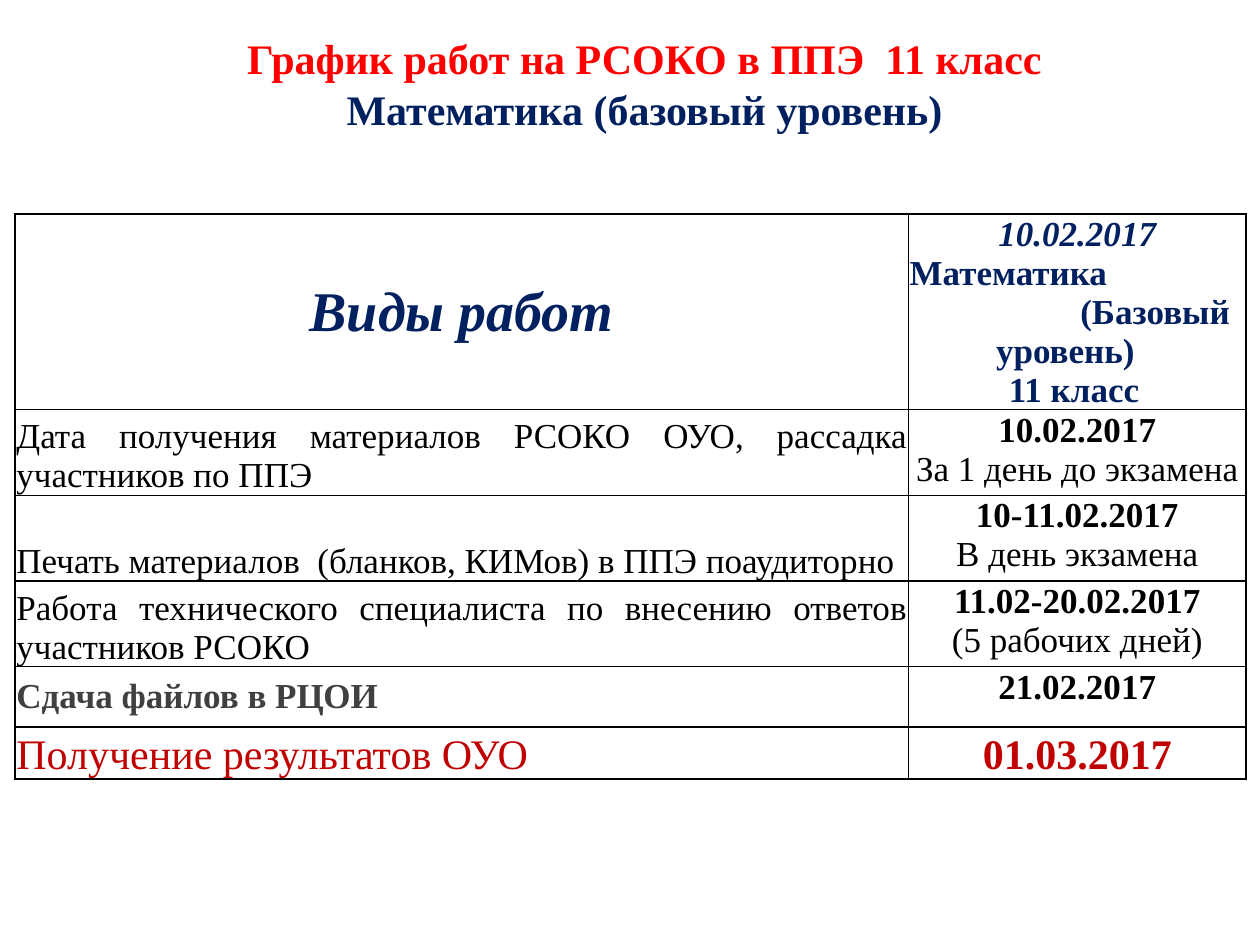
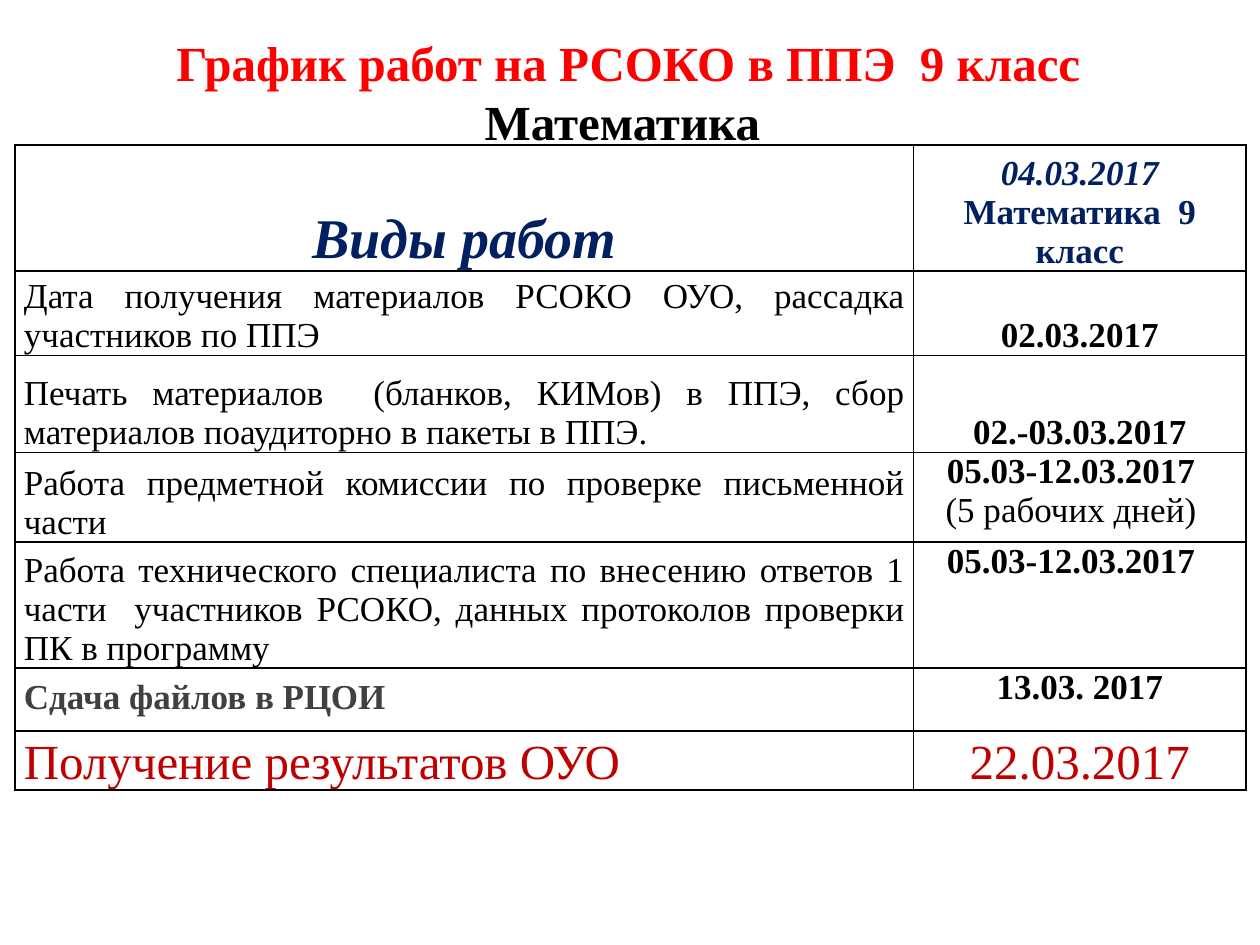
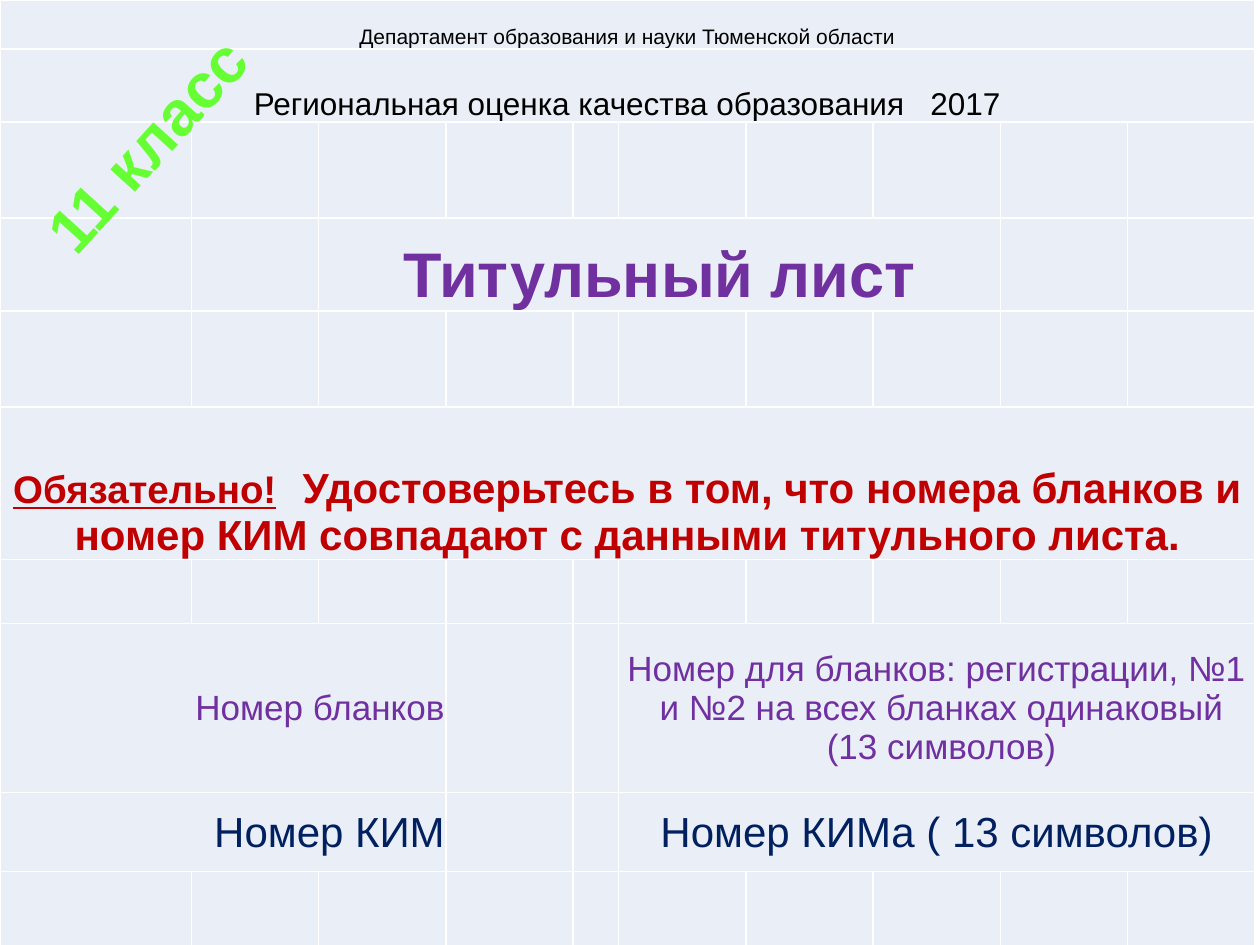
from lxml.etree import SubElement
from pptx import Presentation
from pptx.dml.color import RGBColor
from pptx.enum.text import MSO_ANCHOR, PP_ALIGN
from pptx.oxml.ns import qn
from pptx.util import Pt

PX = 9144  # EMU in one px, 100 px to the inch

BLACK = RGBColor(0x00, 0x00, 0x00)
WHITE = RGBColor(0xFF, 0xFF, 0xFF)
NAVY = RGBColor(0x00, 0x20, 0x60)
RED = RGBColor(0xFF, 0x00, 0x00)
DARK_RED = RGBColor(0xC0, 0x00, 0x00)
GRAY = RGBColor(0x40, 0x40, 0x40)
PURPLE = RGBColor(0x70, 0x30, 0xA0)
GREEN = RGBColor(0x66, 0xFF, 0x33)
PALE_BLUE = RGBColor(0xEA, 0xEF, 0xF7)

SERIF = "Times New Roman"
SANS = "Arial"
LEFT, CENTER, RIGHT, JUSTIFY = PP_ALIGN.LEFT, PP_ALIGN.CENTER, PP_ALIGN.RIGHT, PP_ALIGN.JUSTIFY
TOP, MIDDLE, BOTTOM = MSO_ANCHOR.TOP, MSO_ANCHOR.MIDDLE, MSO_ANCHOR.BOTTOM


def styled(text, **text_format):
    """Pair a text with the format that write() gives it."""
    return text, text_format


def cell_text(anchor, *lines):
    return anchor, lines


def write(frame, text, font=SERIF, size=20, color=BLACK, bold=False, italic=False,
          underline=False, align=CENTER, indent_right=0, before=0, after=0,
          spacing=None, inline=False):
    """Add text as a new paragraph, or to the last paragraph when inline."""
    paragraph = frame.paragraphs[-1]
    if not inline:
        if paragraph.runs:
            paragraph = frame.add_paragraph()
        paragraph.alignment = align
        paragraph.space_before, paragraph.space_after = Pt(before), Pt(after)
        if spacing:
            paragraph.line_spacing = spacing
        if indent_right:
            paragraph._p.get_or_add_pPr().set("marR", str(indent_right * PX))
    run = paragraph.add_run()
    run.text = text
    run.font.name, run.font.size = font, Pt(size)
    run.font.bold, run.font.italic, run.font.underline = bold, italic, underline
    run.font.color.rgb = color


def set_borders(cell, color):
    properties = cell._tc.get_or_add_tcPr()
    for side in ("a:lnL", "a:lnR", "a:lnT", "a:lnB"):
        line = SubElement(properties, qn(side), w=str(Pt(1)))
        fill = SubElement(line, qn("a:solidFill"))
        SubElement(fill, qn("a:srgbClr"), val=str(color))


class Deck:
    def __init__(self):
        self.presentation = Presentation()
        self.presentation.slide_width = 1000 * PX
        self.presentation.slide_height = 750 * PX
        self.slide = None

    def new_slide(self):
        self.slide = self.presentation.slides.add_slide(self.presentation.slide_layouts[6])

    def text(self, left, top, width, height, *lines, rotation=0, wrap=True):
        shape = self.slide.shapes.add_textbox(left * PX, top * PX, width * PX, height * PX)
        shape.rotation = rotation
        shape.text_frame.word_wrap = wrap
        for text, text_format in lines:
            write(shape.text_frame, text, **text_format)

    def table(self, left, top, columns, rows, contents, insets=(1, 1, 1, 0),
              border=BLACK, fill=None, spans=()):
        """Draw a table; contents maps (row, column) to a cell_text, spans are (row, first, last)."""
        table = self.slide.shapes.add_table(
            len(rows), len(columns), left * PX, top * PX, sum(columns) * PX, sum(rows) * PX).table
        table.first_row = table.horz_banding = False
        for column, width in zip(table.columns, columns):
            column.width = width * PX
        for row, height in zip(table.rows, rows):
            row.height = height * PX
        for cell in table.iter_cells():
            set_borders(cell, border)
            if fill:
                cell.fill.solid()
                cell.fill.fore_color.rgb = fill
            else:
                cell.fill.background()
        for row, first, last in spans:
            table.cell(row, first).merge(table.cell(row, last))
        for position, (anchor, lines) in contents.items():
            cell = table.cell(*position)
            cell.vertical_anchor = anchor
            (cell.margin_left, cell.margin_top,
             cell.margin_right, cell.margin_bottom) = (inset * PX for inset in insets)
            for text, text_format in lines:
                write(cell.text_frame, text, **text_format)

    def schedule(self, top, columns, rows, insets, header, works, hand_in, results, result_format):
        """Draw a schedule: header, works with dates, then the hand-in and results rows."""
        records = [
            (cell_text(MIDDLE if len(header) > 2 else BOTTOM,
                       styled("Виды работ", size=32, color=NAVY, bold=True, italic=True)),
             cell_text(BOTTOM, *header)),
            *((cell_text(BOTTOM, styled(work, align=JUSTIFY)), date) for work, date in works),
            (cell_text(MIDDLE, styled("Сдача файлов в РЦОИ", color=GRAY, bold=True, align=LEFT,
                                      before=12, after=2, spacing=0.9)),
             cell_text(TOP, styled(hand_in, bold=True))),
            (cell_text(BOTTOM, styled("Получение результатов ОУО", color=DARK_RED, align=JUSTIFY,
                                      size=result_format["size"])),
             cell_text(BOTTOM, styled(results, color=DARK_RED, **result_format))),
        ]
        contents = {(row, column): content
                    for row, record in enumerate(records)
                    for column, content in enumerate(record)}
        self.table(12, top, columns, rows, contents, insets)


def dated(date, note=None, anchor=TOP, indent_right=0):
    """Cell with a bold date and an optional plain note under it."""
    lines = [styled(date, bold=True, indent_right=indent_right)]
    if note:
        lines.append(styled(note))
    return cell_text(anchor, *lines)


def build_grade_11(deck):
    deck.new_slide()
    subject = {"color": NAVY, "bold": True}
    deck.schedule(
        170, [709, 268], [134, 68, 68, 68, 48, 41], (1, 1, 1, 0),
        header=[
            styled("10.02.2017", italic=True, **subject),
            styled("Математика", align=LEFT, **subject),
            styled("(Базовый", align=RIGHT, indent_right=12, **subject),
            styled("уровень) ", **subject),
            styled(" 11 класс", **subject),
        ],
        works=[
            ("Дата получения материалов РСОКО ОУО, рассадка участников по ППЭ ",
             dated("10.02.2017", "За 1 день до экзамена")),
            ("Печать материалов  (бланков, КИМов) в ППЭ поаудиторно ",
             dated("10-11.02.2017", "В день экзамена")),
            ("Работа технического специалиста по внесению ответов участников РСОКО",
             dated("11.02-20.02.2017", "(5 рабочих дней)")),
        ],
        hand_in="21.02.2017", results="01.03.2017", result_format={"size": 24, "bold": True})
    deck.text(35, 21, 953, 91,
              styled("График работ на РСОКО в ППЭ  11 класс", size=24, color=RED, bold=True),
              styled("Математика (базовый уровень)", size=24, **subject))


def build_grade_9(deck):
    deck.new_slide()
    deck.text(35, 21, 937, 151,
              styled("График работ на РСОКО в ППЭ  9 класс ", size=28, color=RED, bold=True),
              styled("Математика", size=28, bold=True, indent_right=19))
    deck.schedule(
        115, [713, 264], [100, 67, 77, 71, 100, 50, 47], (7, 0, 7, 0),
        header=[
            styled("04.03.2017", color=NAVY, bold=True, italic=True),
            styled("Математика  9 класс", color=NAVY, bold=True),
        ],
        works=[
            ("Дата получения материалов РСОКО ОУО, рассадка участников по ППЭ",
             dated("02.03.2017", anchor=BOTTOM)),
            ("Печать материалов  (бланков, КИМов) в ППЭ, сбор материалов поаудиторно "
             "в пакеты в ППЭ.",
             dated("02.-03.03.2017", anchor=BOTTOM)),
            ("Работа предметной комиссии по проверке письменной части",
             dated("05.03-12.03.2017", "(5 рабочих дней)", indent_right=14)),
            ("Работа технического специалиста по внесению ответов 1 части  участников РСОКО, "
             "данных протоколов проверки ПК в программу",
             dated("05.03-12.03.2017", indent_right=14)),
        ],
        hand_in="13.03. 2017", results="22.03.2017", result_format={"size": 28})


def build_title_sheet(deck):
    deck.new_slide()
    warning = {"font": SANS, "color": DARK_RED, "bold": True}
    blank_number = {"font": SANS, "color": PURPLE}
    kim_number = {"font": SANS, "color": NAVY, "size": 24}
    contents = {
        (0, 0): cell_text(BOTTOM, styled("Департамент образования и науки Тюменской области",
                                         font=SANS, size=12)),
        (1, 0): cell_text(BOTTOM, styled("Региональная оценка качества образования   2017",
                                         font=SANS, size=18)),
        (3, 2): cell_text(BOTTOM, styled("Титульный лист", font=SANS, size=36, color=PURPLE,
                                         bold=True)),
        (5, 0): cell_text(
            BOTTOM,
            styled("Обязательно!", size=22, underline=True, **warning),
            styled(" ", size=22, inline=True, **warning),
            styled("  ", size=16, inline=True, **warning),
            styled("Удостоверьтесь в том, что номера бланков и номер КИМ совпадают "
                   "с данными титульного листа.", size=24, inline=True, **warning)),
        (7, 0): cell_text(MIDDLE, styled("Номер бланков", align=RIGHT, **blank_number)),
        (7, 5): cell_text(
            MIDDLE,
            styled("Номер для бланков: регистрации, №1", **blank_number),
            styled(" и №2 на всех бланках одинаковый", **blank_number),
            styled(" (13 символов)", **blank_number)),
        (8, 0): cell_text(MIDDLE, styled("Номер КИМ", align=RIGHT, **kim_number)),
        (8, 5): cell_text(MIDDLE, styled("Номер КИМа ( 13 символов)", **kim_number)),
    }
    deck.table(
        0, 0, [152] + [101] * 3 + [36] + [101] * 5,
        [39, 58, 76, 74, 76, 121, 51, 134, 63, 76], contents,
        border=WHITE, fill=PALE_BLUE,
        spans=[(0, 0, 9), (1, 0, 9), (3, 2, 7), (5, 0, 9),
               (7, 0, 2), (7, 5, 9), (8, 0, 2), (8, 5, 9)])
    deck.text(2, 78, 230, 71,
              styled("11 класс", font=SANS, size=36, color=GREEN, bold=True, align=LEFT),
              rotation=312.3, wrap=False)


def main():
    deck = Deck()
    build_grade_11(deck)
    build_grade_9(deck)
    build_title_sheet(deck)
    deck.presentation.save("out.pptx")


if __name__ == "__main__":
    main()
